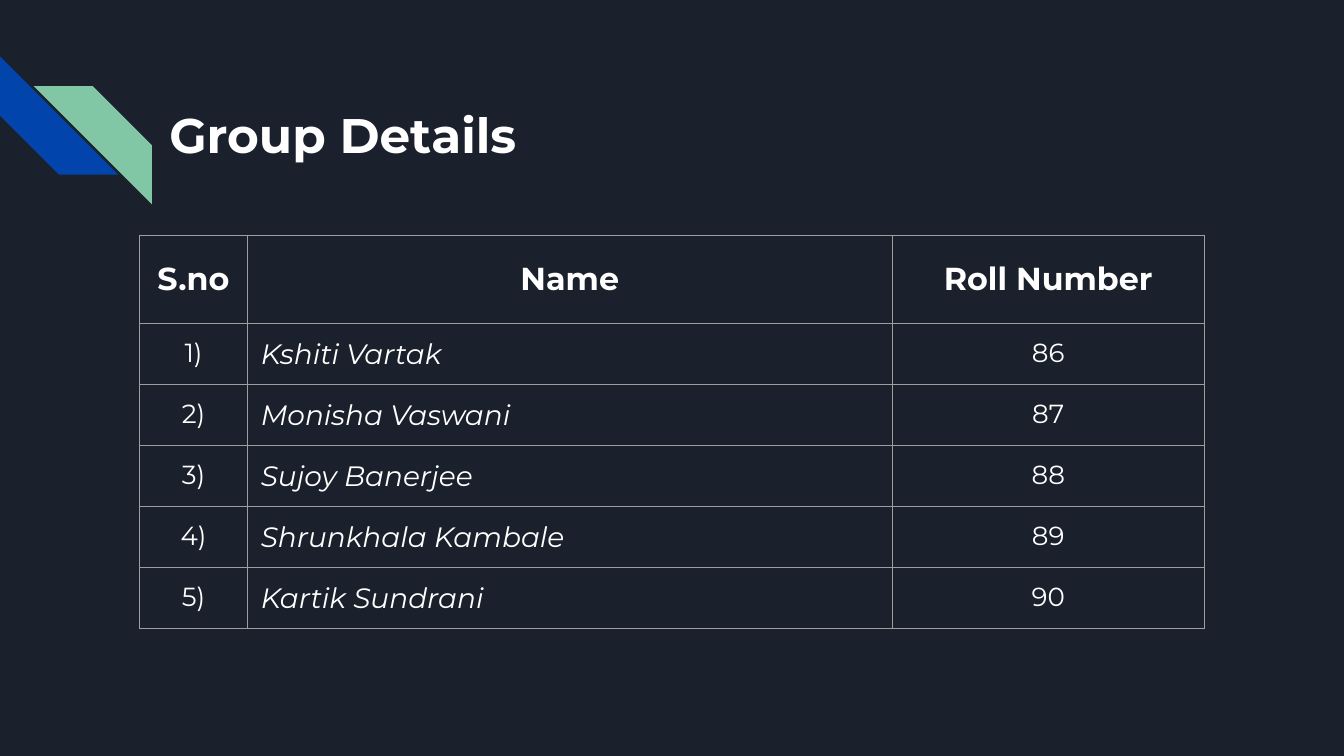
from dataclasses import dataclass

from lxml import etree
from pptx import Presentation
from pptx.dml.color import RGBColor
from pptx.enum.shapes import MSO_SHAPE
from pptx.enum.text import MSO_ANCHOR, MSO_AUTO_SIZE, PP_ALIGN
from pptx.oxml.ns import qn
from pptx.util import Inches, Pt

STRIPE = MSO_SHAPE.DIAGONAL_STRIPE
TOP, MIDDLE = MSO_ANCHOR.TOP, MSO_ANCHOR.MIDDLE
LEFT, CENTER = PP_ALIGN.LEFT, PP_ALIGN.CENTER
NO_AUTOFIT = MSO_AUTO_SIZE.NONE

FONT = "Montserrat"
BACKGROUND, WHITE, BORDER = "1B212C", "FFFFFF", "9E9E9E"
BORDER_WIDTH = Pt(0.75)
INSET = Inches(0.1)
SLIDE_WIDTH = Inches(10)
SLIDE_HEIGHT = SLIDE_WIDTH * 9 // 16
STRIPE_SIZE = 0.88
HEADER_HEIGHT, ROW_HEIGHT = 0.66, 0.45


@dataclass(frozen=True)
class Stripe:
    left: float
    top: float
    rotation: int
    color: str


@dataclass(frozen=True)
class Column:
    heading: str
    width: float
    size: int
    align: PP_ALIGN
    italic: bool = False


STRIPES = [Stripe(0, 0.42, 270, "0145AC"), Stripe(0.25, 0.64, 90, "82C7A5")]
COLUMNS = [
    Column("S.no", 0.8, 14, CENTER),
    Column("Name", 4.8, 15, LEFT, True),
    Column("Roll Number", 2.32, 14, CENTER),
]
MEMBERS = [
    "Kshiti Vartak",
    "Monisha Vaswani",
    "Sujoy Banerjee",
    "Shrunkhala Kambale",
    "Kartik Sundrani",
]
FIRST_ROLL_NUMBER = 86


def rgb(color: str) -> RGBColor:
    return RGBColor.from_string(color)


def set_insets(target) -> None:
    target.margin_left = target.margin_right = INSET
    target.margin_top = target.margin_bottom = INSET


def style_paragraph(para, size: int, align: PP_ALIGN, bold=False, italic=False) -> None:
    para.alignment = align
    para.font.name = FONT
    para.font.size = Pt(size)
    para.font.bold = bold
    para.font.italic = italic
    para.font.color.rgb = rgb(WHITE)


def draw_stripe(page, stripe: Stripe) -> None:
    shape = page.shapes.add_shape(
        STRIPE, Inches(stripe.left), Inches(stripe.top),
        Inches(STRIPE_SIZE), Inches(STRIPE_SIZE),
    )
    shape.adjustments[0] = 0.5
    shape.rotation = stripe.rotation
    shape.shadow.inherit = False
    shape.fill.solid()
    shape.fill.fore_color.rgb = rgb(stripe.color)
    shape.line.fill.background()


def draw_title(page, text: str) -> None:
    title = page.shapes.title
    title.left, title.top = Inches(1.16), Inches(0.68)
    title.width, title.height = Inches(7.14), Inches(0.64)
    frame = title.text_frame
    frame.text = text
    frame.auto_size = NO_AUTOFIT
    frame.vertical_anchor = TOP
    set_insets(frame)
    style_paragraph(frame.paragraphs[0], 26, LEFT, bold=True)


def add_borders(cell) -> None:
    properties = cell._tc.get_or_add_tcPr()
    for position, side in enumerate(("lnL", "lnR", "lnT", "lnB")):
        line = etree.Element(qn(f"a:{side}"), w=str(BORDER_WIDTH))
        fill = etree.SubElement(line, qn("a:solidFill"))
        etree.SubElement(fill, qn("a:srgbClr"), val=BORDER)
        properties.insert(position, line)


def fill_cell(cell, text: str, column: Column, is_header: bool) -> None:
    cell.text = text
    cell.fill.background()
    cell.vertical_anchor = MIDDLE if is_header else TOP
    set_insets(cell)
    add_borders(cell)
    para = cell.text_frame.paragraphs[0]
    if is_header:
        style_paragraph(para, 17, CENTER, bold=True)
    else:
        style_paragraph(para, column.size, column.align, italic=column.italic)


def draw_table(page) -> None:
    rows = [[column.heading for column in COLUMNS]]
    for index, name in enumerate(MEMBERS):
        rows.append([f"{index + 1})", name, str(FIRST_ROLL_NUMBER + index)])
    width = sum(column.width for column in COLUMNS)
    height = HEADER_HEIGHT + ROW_HEIGHT * len(MEMBERS)
    table = page.shapes.add_table(
        len(rows), len(COLUMNS), Inches(1.04), Inches(1.75), Inches(width), Inches(height)
    ).table
    table.horz_banding = False
    for index, column in enumerate(COLUMNS):
        table.columns[index].width = Inches(column.width)
    for row_index, texts in enumerate(rows):
        is_header = row_index == 0
        table.rows[row_index].height = Inches(HEADER_HEIGHT if is_header else ROW_HEIGHT)
        for column_index, text in enumerate(texts):
            cell = table.cell(row_index, column_index)
            fill_cell(cell, text, COLUMNS[column_index], is_header)


def main() -> None:
    deck = Presentation()
    deck.slide_width, deck.slide_height = SLIDE_WIDTH, SLIDE_HEIGHT
    page = deck.slides.add_slide(deck.slide_layouts[5])
    page.background.fill.solid()
    page.background.fill.fore_color.rgb = rgb(BACKGROUND)
    for stripe in STRIPES:
        draw_stripe(page, stripe)
    draw_table(page)
    draw_title(page, "Group Details")
    deck.save("out.pptx")


if __name__ == "__main__":
    main()
